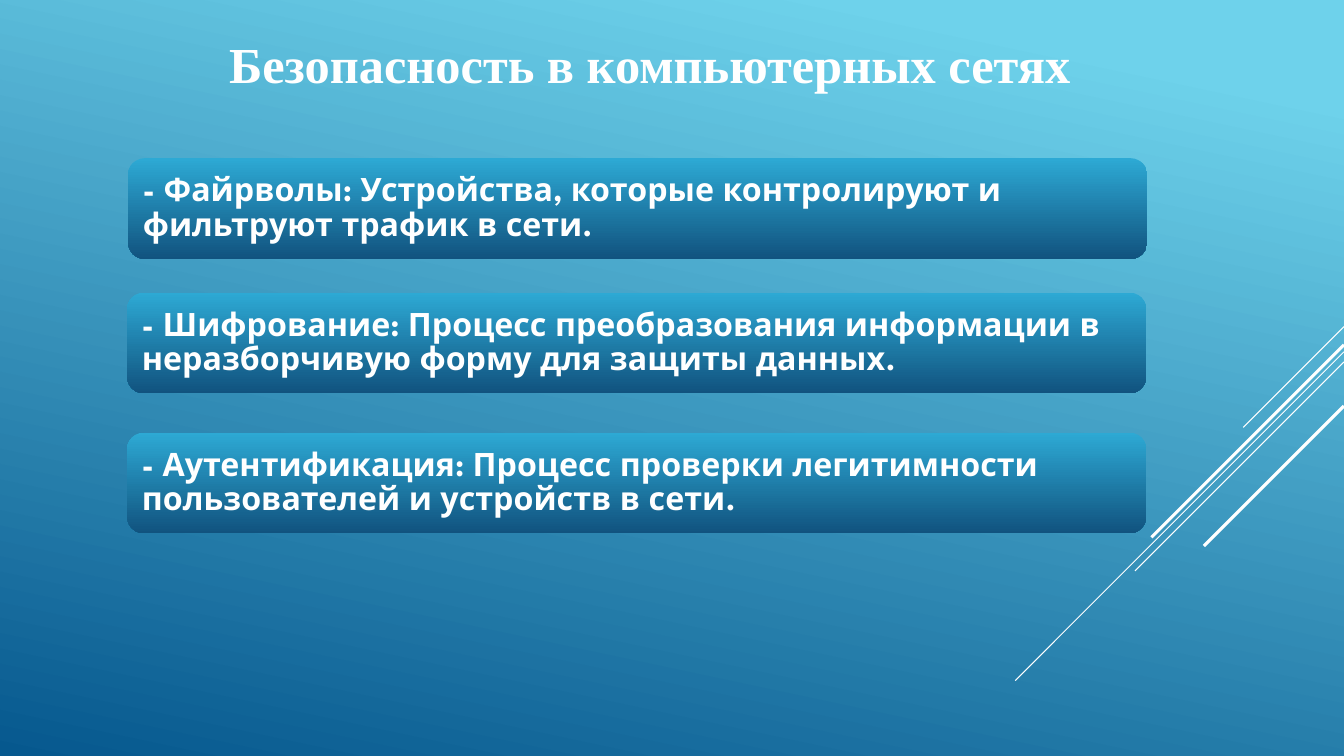
"""Build the slide on security in computer networks."""
from dataclasses import dataclass

from pptx import Presentation
from pptx.dml.color import RGBColor
from pptx.dml.fill import FillFormat
from pptx.enum import shapes, text
from pptx.oxml import ns
from pptx.slide import Slide
from pptx.text.text import TextFrame
from pptx.util import Pt
from lxml import etree

WHITE = RGBColor(0xFF, 0xFF, 0xFF)
SKY = RGBColor(0x6E, 0xD2, 0xEB)
NAVY = RGBColor(0x06, 0x58, 0x8E)
CARD_TOP = RGBColor(0x2D, 0xA9, 0xD4)
CARD_BOTTOM = RGBColor(0x11, 0x53, 0x7F)
SLIDE_WIDTH = 960
CARD_WIDTH, CARD_HEIGHT = 728, 72


@dataclass
class Diagonal:
    """A 45-degree line falling leftwards from the right edge."""
    top: float
    run: float
    weight: float


@dataclass
class Card:
    """A rounded box holding one definition."""
    left: float
    top: float
    wording: str


DIAGONALS = [
    Diagonal(233.3, 72, 0.75),
    Diagonal(251.3, 234.8, 0.75),
    Diagonal(258.5, 149.3, 0.75),
    Diagonal(246.3, 137.5, 2.25),
    Diagonal(290, 100, 2.25),
]
CARDS = [
    Card(91.5, 113, "- Файрволы: Устройства, которые контролируют и "
                    "фильтруют трафик в сети."),
    Card(90.8, 209, "- Шифрование: Процесс преобразования информации в "
                    "неразборчивую форму для защиты данных."),
    Card(90.8, 309, "- Аутентификация: Процесс проверки легитимности "
                    "пользователей и устройств в сети."),
]


def set_gradient(fill: FillFormat, start: RGBColor, end: RGBColor,
                 angle: float, offset: float = 0) -> None:
    """Apply a two-stop gradient, with the angle counted clockwise."""
    fill.gradient()
    fill.gradient_angle = 360 - angle
    for stop, color, position in zip(fill.gradient_stops, (start, end), (offset, 1)):
        stop.color.rgb = color
        stop.position = position


def set_text(tf: TextFrame, wording: str, font: str, size: float,
             align: text.PP_ALIGN) -> None:
    """Write one bold white paragraph."""
    tf.text = wording
    tf.word_wrap = True
    p = tf.paragraphs[0]
    p.alignment = align
    r = p.runs[0]
    r.font.name = font
    r.font.size = Pt(size)
    r.font.bold = True
    r.font.color.rgb = WHITE


def add_diagonal(s: Slide, line: Diagonal) -> None:
    """Draw one diagonal line."""
    sp = s.shapes.add_connector(
        shapes.MSO_CONNECTOR.STRAIGHT, Pt(SLIDE_WIDTH), Pt(line.top),
        Pt(SLIDE_WIDTH - line.run), Pt(line.top + line.run))
    sp.line.color.rgb = WHITE
    sp.line.width = Pt(line.weight)
    etree.SubElement(sp._element.spPr, ns.qn("a:effectLst"))


def add_card(s: Slide, card: Card) -> None:
    """Draw one definition card."""
    sp = s.shapes.add_shape(
        shapes.MSO_SHAPE.ROUNDED_RECTANGLE, Pt(card.left), Pt(card.top),
        Pt(CARD_WIDTH), Pt(CARD_HEIGHT))
    sp.shadow.inherit = False
    sp.line.fill.background()
    set_gradient(sp.fill, CARD_TOP, CARD_BOTTOM, 90)
    tf = sp.text_frame
    tf.margin_left = tf.margin_right = tf.margin_top = tf.margin_bottom = Pt(7.2)
    tf.vertical_anchor = text.MSO_ANCHOR.MIDDLE
    set_text(tf, card.wording, "League Spartan", 23, text.PP_ALIGN.LEFT)
    tf.paragraphs[0].line_spacing = 0.9


def add_title(s: Slide) -> None:
    """Place and format the slide title."""
    sp = s.shapes.title
    sp.left, sp.top, sp.width, sp.height = Pt(119), Pt(20), Pt(690.5), Pt(51)
    tf = sp.text_frame
    set_text(tf, "Безопасность в компьютерных сетях", "Times New Roman", 36,
             text.PP_ALIGN.CENTER)
    tf.vertical_anchor = text.MSO_ANCHOR.TOP
    tf.auto_size = text.MSO_AUTO_SIZE.SHAPE_TO_FIT_TEXT


def main() -> None:
    """Build and save the presentation."""
    prs = Presentation()
    prs.slide_width, prs.slide_height = Pt(SLIDE_WIDTH), Pt(540)
    s = prs.slides.add_slide(prs.slide_layouts[5])
    set_gradient(s.background.fill, SKY, NAVY, 102, 0.1)
    for line in DIAGONALS:
        add_diagonal(s, line)
    add_title(s)
    for card in CARDS:
        add_card(s, card)
    prs.save("out.pptx")


if __name__ == "__main__":
    main()
